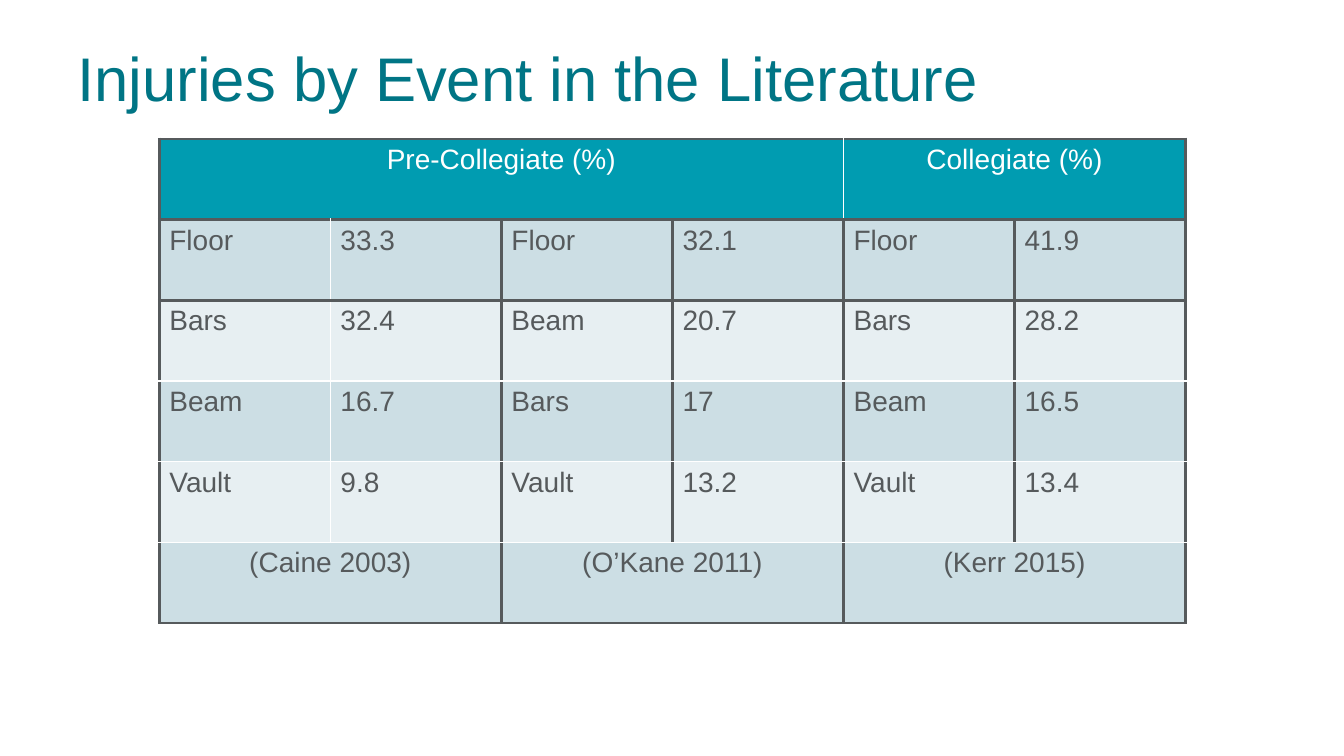
import dataclasses

import lxml.etree
import pptx
import pptx.dml.color
import pptx.enum.text
import pptx.oxml.ns
import pptx.util

Inches = pptx.util.Inches
ALIGN = pptx.enum.text.PP_ALIGN
FONT = "Arial"
TITLE, TEAL, GREY, WHITE = "007585", "009CB1", "565A5C", "FFFFFF"
DARK, LIGHT = "CCDEE4", "E7EFF2"
COLS, ROWS = 6, 6


@dataclasses.dataclass
class Block:
    text: str
    row: int
    col: int
    span: int = 1


EVENTS = [
    ["Floor", "33.3", "Floor", "32.1", "Floor", "41.9"],
    ["Bars", "32.4", "Beam", "20.7", "Bars", "28.2"],
    ["Beam", "16.7", "Bars", "17", "Beam", "16.5"],
    ["Vault", "9.8", "Vault", "13.2", "Vault", "13.4"],
]
BLOCKS = [
    Block("Pre-Collegiate (%)", 0, 0, 4),
    Block("Collegiate (%)", 0, 4, 2),
    *(Block(text, row, col)
      for row, line in enumerate(EVENTS, 1) for col, text in enumerate(line)),
    Block("(Caine 2003)", 5, 0, 2),
    Block("(O’Kane 2011)", 5, 2, 2),
    Block("(Kerr 2015)", 5, 4, 2),
]


def color(code: str) -> pptx.dml.color.RGBColor:
    return pptx.dml.color.RGBColor.from_string(code)


def write(frame, text: str, size: float, code: str, align=ALIGN.LEFT) -> None:
    para = frame.paragraphs[0]
    para.alignment = align
    run = para.add_run()
    run.text = text
    run.font.name = FONT
    run.font.size = pptx.util.Pt(size)
    run.font.color.rgb = color(code)


def border(cell, sides: dict[str, str]) -> None:
    """Add side lines ahead of the cell fill, in schema order."""
    props = cell._tc.get_or_add_tcPr()
    qn = pptx.oxml.ns.qn
    order = [side for side in "LRTB" if side in sides]
    for place, side in enumerate(order):
        code = sides[side]
        width = pptx.util.Pt(2.25 if code == GREY else 1)
        line = lxml.etree.Element(qn(f"a:ln{side}"), w=str(int(width)))
        fill = lxml.etree.SubElement(line, qn("a:solidFill"))
        lxml.etree.SubElement(fill, qn("a:srgbClr"), val=code)
        props.insert(place, line)


def upright(row: int, edge: int) -> str:
    """Colour of a vertical grid line."""
    return WHITE if edge == 1 or (row == 0 and edge == 4) else GREY


def level(edge: int) -> str:
    """Colour of a horizontal grid line."""
    return WHITE if edge in (3, 4, 5) else GREY


def draw(table, block: Block) -> None:
    row, end = block.row, block.col + block.span
    head = row == 0
    first = table.cell(row, block.col)
    if block.span > 1:
        first.merge(table.cell(row, end - 1))
    for col in range(block.col, end):
        cell = table.cell(row, col)
        cell.fill.solid()
        shade = TEAL if head else DARK if row % 2 else LIGHT
        cell.fill.fore_color.rgb = color(shade)
        sides = {"T": level(row), "B": level(row + 1)}
        if col == block.col:
            sides["L"] = upright(row, col)
        if col in (block.col, end - 1):
            sides["R"] = upright(row, end)
        border(cell, sides)
    align = ALIGN.CENTER if block.span > 1 else ALIGN.LEFT
    write(first.text_frame, block.text, 20, WHITE if head else GREY, align)


def main() -> None:
    deck = pptx.Presentation()
    deck.slide_width, deck.slide_height = Inches(13.33), Inches(7.5)
    slide = deck.slides.add_slide(deck.slide_layouts[6])

    # Title
    box = slide.shapes.add_textbox(Inches(0.67), Inches(0.3), Inches(12), Inches(1.25))
    frame = box.text_frame
    frame.word_wrap = True
    frame.margin_top = Inches(0.1)
    write(frame, "Injuries by Event in the Literature", 44, TITLE)

    # Injury table
    grid = slide.shapes.add_table(
        ROWS, COLS, Inches(1.58), Inches(1.38), Inches(10.18), Inches(4.8))
    for block in BLOCKS:
        draw(grid.table, block)

    deck.save("out.pptx")


if __name__ == "__main__":
    main()
